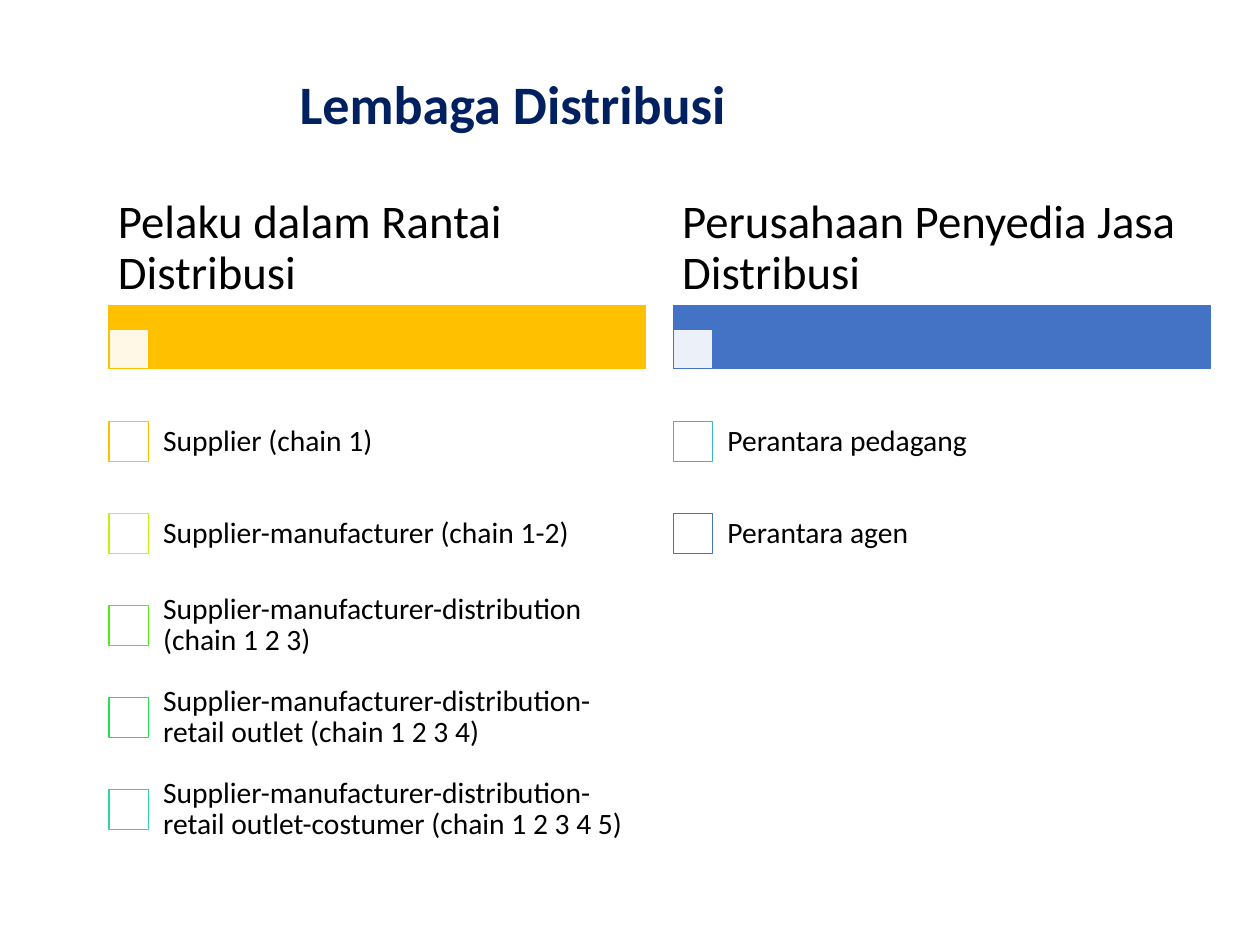
from lxml import etree
from pptx import Presentation
from pptx.dml.color import RGBColor
from pptx.enum.shapes import MSO_SHAPE
from pptx.enum.text import MSO_ANCHOR, MSO_AUTO_SIZE, PP_ALIGN
from pptx.oxml.ns import qn
from pptx.util import Pt

RECTANGLE = MSO_SHAPE.RECTANGLE
MIDDLE = MSO_ANCHOR.MIDDLE
NO_AUTOFIT = MSO_AUTO_SIZE.NONE
LEFT = PP_ALIGN.LEFT

COMPARISON_LAYOUT = 4
HEADING_IDS = (1, 3)
LIST_IDS = (2, 4)

COLUMN_LEFT = 88.6
COLUMN_STEP = 458.6
COLUMN_WIDTH = 436.3
BOX_SIZE = 32.2
ITEM_TOP = 321.4
ITEM_STEP = 74.75
ITEM_INDENT = 30.6

COLUMNS = [
    ("Pelaku dalam Rantai Distribusi", "FFC000", [
        ("Supplier (chain 1)", "FFC000"),
        ("Supplier-manufacturer (chain 1-2)", "BEF50C"),
        ("Supplier-manufacturer-distribution (chain 1 2 3)", "53EB17"),
        ("Supplier-manufacturer-distribution-retail outlet (chain 1 2 3 4)", "23E148"),
        ("Supplier-manufacturer-distribution-retail outlet-costumer (chain 1 2 3 4 5)", "2ED7A1"),
    ]),
    ("Perusahaan Penyedia Jasa Distribusi", "4472C4", [
        ("Perantara pedagang", "39B6CE"),
        ("Perantara agen", "4472C4"),
    ]),
]


def color(hex_value):
    return RGBColor.from_string(hex_value)


class SlideBuilder:
    font_name = "Calibri"
    white = "FFFFFF"
    black = "000000"
    navy = "002060"

    def __init__(self, slide):
        self.slide = slide
        self.placeholders = {p.placeholder_format.idx: p for p in slide.placeholders}

    def set_text(self, holder, text, size, hex_value, bold=False, inset=(7.2, 3.6)):
        """Fill a text holder; inset is horizontal, then vertical."""
        frame = holder.text_frame
        across, down = inset
        frame_format = {
            "word_wrap": True, "auto_size": NO_AUTOFIT, "vertical_anchor": MIDDLE,
            "margin_left": Pt(across), "margin_right": Pt(across),
            "margin_top": Pt(down), "margin_bottom": Pt(down),
        }
        paragraph = frame.paragraphs[0]
        paragraph.text = text
        paragraph_format = {"alignment": LEFT, "line_spacing": 0.9, "space_before": Pt(0)}
        font = paragraph.runs[0].font
        font_format = {"name": self.font_name, "size": Pt(size), "bold": bold}
        for target, values in ((frame, frame_format), (paragraph, paragraph_format),
                               (font, font_format)):
            for name, value in values.items():
                setattr(target, name, value)
        font.color.rgb = color(hex_value)

    def fill_placeholder(self, idx, bounds, text, size, hex_value, bold=False):
        holder = self.placeholders[idx]
        for name, value in zip(("left", "top", "width", "height"), bounds):
            setattr(holder, name, Pt(value))
        self.set_text(holder, text, size, hex_value, bold)

    def remove_placeholder(self, idx):
        element = self.placeholders[idx].element
        element.getparent().remove(element)

    def rectangle(self, bounds, fill, line, opacity=100):
        shape = self.slide.shapes.add_shape(RECTANGLE, *map(Pt, bounds))
        shape.shadow.inherit = False
        shape.fill.solid()
        shape.fill.fore_color.rgb = color(fill)
        shape.line.color.rgb = color(line)
        shape.line.width = Pt(1)
        if opacity < 100:
            fill_color = shape.element.spPr.find(qn("a:solidFill"))[0]
            etree.SubElement(fill_color, qn("a:alpha"), val=str(opacity * 1000))

    def checkbox(self, left, top, line, opacity=100):
        self.rectangle((left, top, BOX_SIZE, BOX_SIZE), self.white, line, opacity)

    def item(self, left, top, text, line):
        self.checkbox(left, top + (ITEM_STEP - BOX_SIZE) / 2, line)
        label = self.slide.shapes.add_textbox(
            Pt(left + ITEM_INDENT), Pt(top), Pt(COLUMN_WIDTH - ITEM_INDENT), Pt(ITEM_STEP))
        self.set_text(label, text, 24, self.black, inset=(13.4, 13.4))

    def column(self, left, heading_id, heading, accent, items):
        self.fill_placeholder(heading_id, (left, 156.4, COLUMN_WIDTH, 92), heading, 38, self.black)
        self.rectangle((left, 248.4, COLUMN_WIDTH, 51.3), accent, accent)
        self.checkbox(left, 267.6, accent, opacity=90)
        for row, (text, line) in enumerate(items):
            self.item(left, ITEM_TOP + row * ITEM_STEP, text, line)


def main():
    deck = Presentation()
    deck.slide_width, deck.slide_height = Pt(1024), Pt(768)
    builder = SlideBuilder(deck.slides.add_slide(deck.slide_layouts[COMPARISON_LAYOUT]))
    builder.fill_placeholder(0, (236.2, 41.8, 787.7, 90), "Lembaga Distribusi",
                             44, builder.navy, bold=True)
    for idx in LIST_IDS:
        builder.remove_placeholder(idx)
    for number, (heading_id, details) in enumerate(zip(HEADING_IDS, COLUMNS)):
        builder.column(COLUMN_LEFT + number * COLUMN_STEP, heading_id, *details)
    deck.save("out.pptx")


if __name__ == "__main__":
    main()
